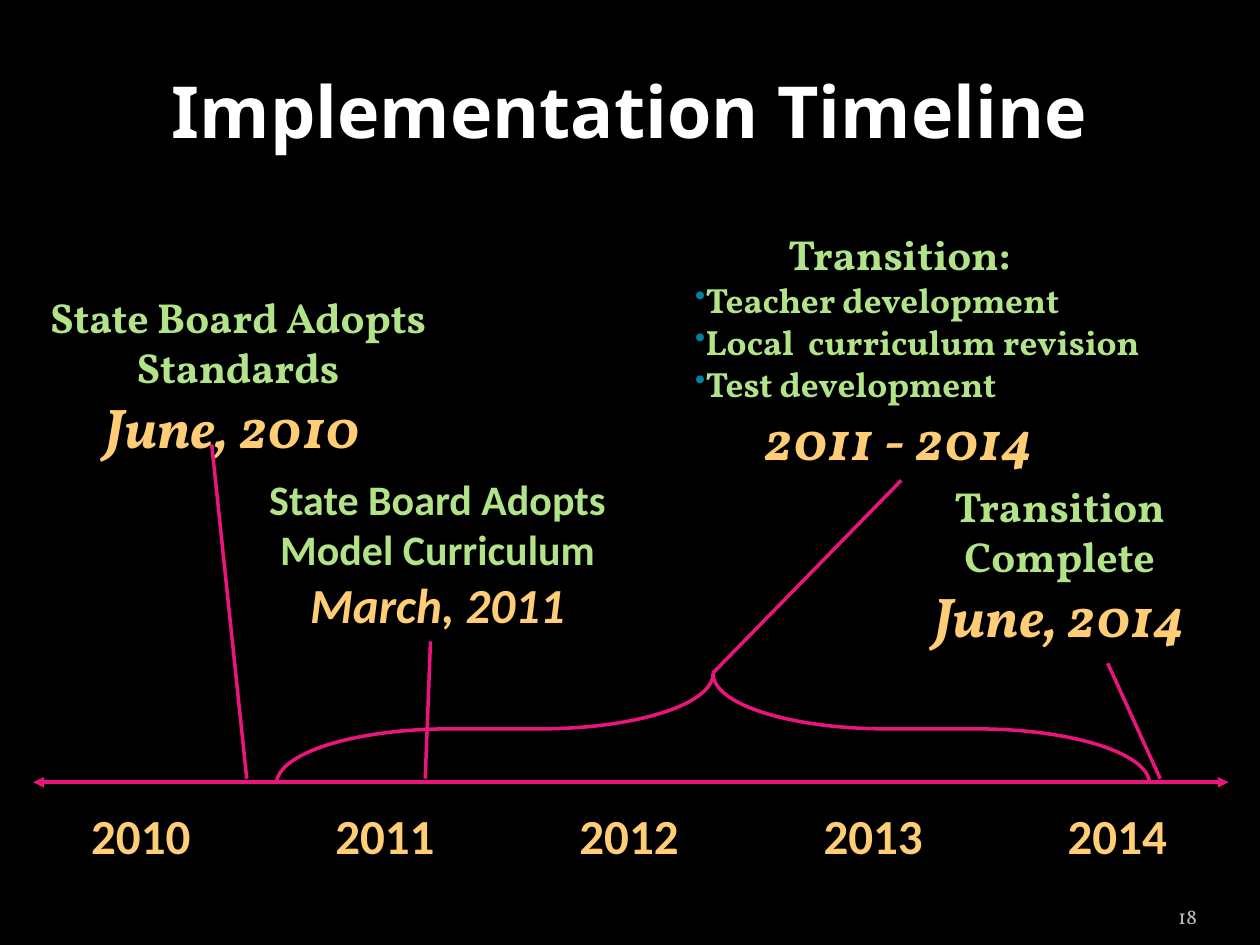
"""Build the implementation timeline slide."""
from lxml import etree
from pptx import Presentation
from pptx.dml.color import RGBColor
from pptx.enum.shapes import MSO_CONNECTOR, MSO_SHAPE
from pptx.enum.text import MSO_ANCHOR, PP_ALIGN
from pptx.oxml.ns import qn
from pptx.util import Pt

STRAIGHT = MSO_CONNECTOR.STRAIGHT
RIGHT_BRACE = MSO_SHAPE.RIGHT_BRACE
MIDDLE, BOTTOM = MSO_ANCHOR.MIDDLE, MSO_ANCHOR.BOTTOM
LEFT, CENTER, RIGHT = PP_ALIGN.LEFT, PP_ALIGN.CENTER, PP_ALIGN.RIGHT
PINK, GREEN, GOLD = "EA157A", "B2E389", "FFCD76"


def color(hex_string):
    return RGBColor.from_string(hex_string)


def write(paragraph, text, font_name, size, hex_string, align=CENTER, bold=True, italic=False):
    paragraph.text = text
    paragraph.alignment = align
    font = paragraph.font
    font.name, font.size, font.bold, font.italic = font_name, Pt(size), bold, italic
    font.color.rgb = color(hex_string)


presentation = Presentation()
presentation.slide_width, presentation.slide_height = Pt(720), Pt(540)
slide = presentation.slides.add_slide(presentation.slide_layouts[5])
slide.background.fill.solid()
slide.background.fill.fore_color.rgb = color("000000")

title = slide.shapes.title
title.left, title.top, title.width, title.height = Pt(36), Pt(30), Pt(648), Pt(66)
title.text_frame.vertical_anchor = MIDDLE
write(title.text_frame.paragraphs[0], "Implementation Timeline", "Noto Sans", 41, "FFFFFF")

number_frame = slide.shapes.add_textbox(Pt(624), Pt(505.5), Pt(60), Pt(28.75)).text_frame
number_frame.margin_left = number_frame.margin_right = 0
number_frame.vertical_anchor = BOTTOM
write(number_frame.paragraphs[0], "18", "Vollkorn", 12, "BDBDBD", RIGHT, bold=False)

for index in range(5):
    year_box = slide.shapes.add_textbox(Pt(44.5 + 139.5 * index), Pt(456.5), Pt(72), Pt(41))
    write(year_box.text_frame.paragraphs[0], str(2010 + index), "Calibri", 28, GOLD)

callouts = [
    ((21, 163, 230, 104), "Vollkorn", "State Board Adopts Standards", [], "June, 2010 ", 32),
    ((136, 267, 228, 99), "Calibri", "State Board Adopts Model Curriculum", [], "March, 2011", 28),
    ((368.5, 127, 291, 148), "Vollkorn", "Transition:",
     ["Teacher development", "Local  curriculum revision", "Test development"], "2011 - 2014", 32),
    ((512.5, 271, 186, 104), "Vollkorn", "Transition Complete", [], "June, 2014", 32),
]
for box, font_name, heading, tasks, date, date_size in callouts:
    text_frame = slide.shapes.add_textbox(*map(Pt, box)).text_frame
    text_frame.word_wrap = True
    write(text_frame.paragraphs[0], heading, font_name, 24, GREEN)
    for task in tasks:
        paragraph = text_frame.add_paragraph()
        write(paragraph, task, font_name, 20, GREEN, LEFT)
        properties = paragraph._p.get_or_add_pPr()
        properties.set("marL", "0")
        properties.set("indent", str(Pt(21.6)))
        bullet_color = etree.Element(qn("a:buClr"))
        etree.SubElement(bullet_color, qn("a:srgbClr"), val="0082A5")
        bullet_size = etree.Element(qn("a:buSzPct"), val="86000")
        bullet = etree.Element(qn("a:buChar"), char="•")
        for position, element in enumerate((bullet_color, bullet_size, bullet)):
            properties.insert(position, element)
    write(text_frame.add_paragraph(), date, font_name, date_size, GOLD, italic=True)

brace = slide.shapes.add_shape(RIGHT_BRACE, Pt(376), Pt(167), Pt(63), Pt(499))
brace.rotation = 270
brace.adjustments[0], brace.adjustments[1] = 1.571, 0.5
brace.shadow.inherit = False
brace.fill.background()
brace.line.color.rgb = color(PINK)
brace.line.width = Pt(2)

lines = [
    ((19, 447, 702, 447), True),
    ((121, 254, 141, 445), False),
    ((246, 366.5, 243, 445), False),
    ((407.5, 384.5, 515, 274.5), False),
    ((633, 379, 663, 445), False),
]
for ends, is_axis in lines:
    connector = slide.shapes.add_connector(STRAIGHT, *map(Pt, ends))
    connector.line.color.rgb = color(PINK)
    connector.line.width = Pt(2)
    etree.SubElement(connector._element.spPr, qn("a:effectLst"))
    if is_axis:
        for end in ("a:headEnd", "a:tailEnd"):
            etree.SubElement(connector.line._get_or_add_ln(), qn(end), type="triangle")

presentation.save("out.pptx")
